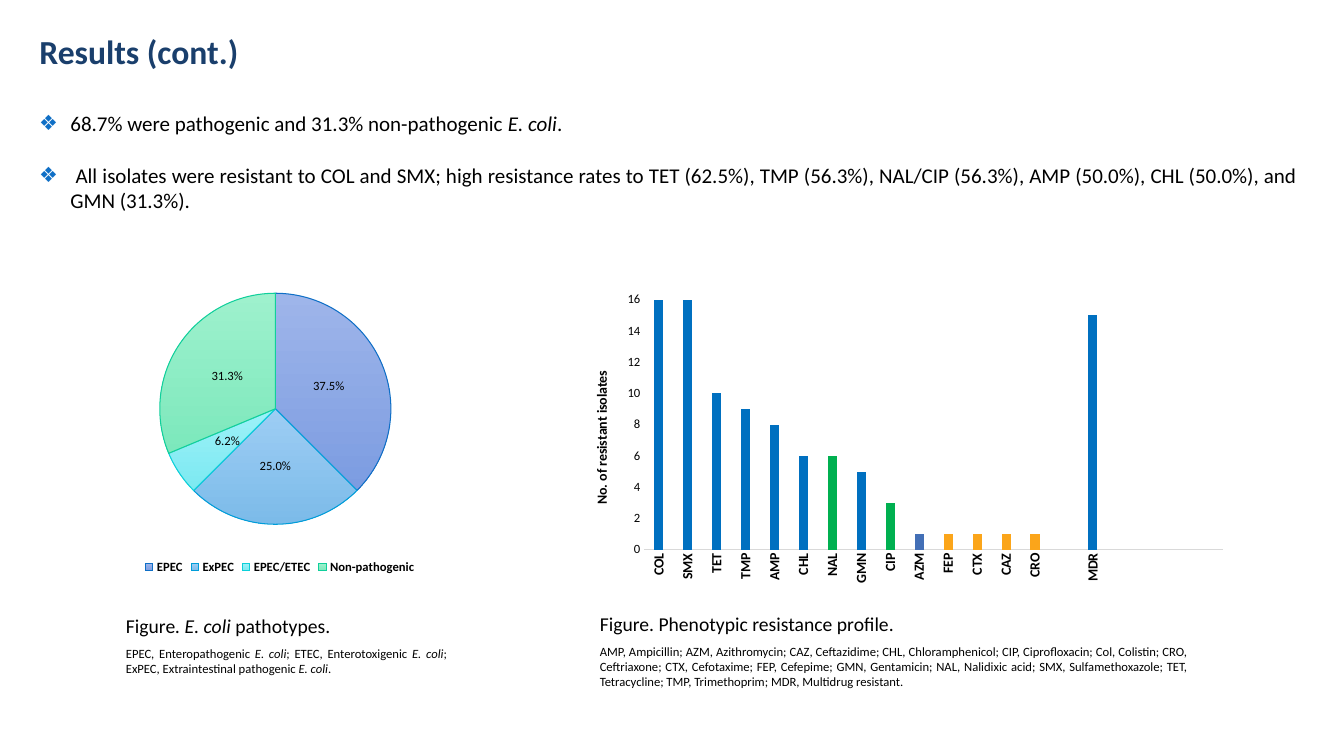
from dataclasses import dataclass
from lxml import etree
from pptx import Presentation
from pptx.chart.data import CategoryChartData
from pptx.dml.color import RGBColor
from pptx.enum.chart import XL_CHART_TYPE, XL_LABEL_POSITION, XL_LEGEND_POSITION, XL_TICK_MARK
from pptx.enum.text import MSO_ANCHOR, PP_ALIGN
from pptx.oxml.ns import qn
from pptx.util import Inches, Pt

PIE, COLUMNS = XL_CHART_TYPE.PIE, XL_CHART_TYPE.COLUMN_CLUSTERED
CENTER, BOTTOM, NO_TICK = XL_LABEL_POSITION.CENTER, XL_LEGEND_POSITION.BOTTOM, XL_TICK_MARK.NONE
JUSTIFY, LEFT, MIDDLE = PP_ALIGN.JUSTIFY, PP_ALIGN.LEFT, MSO_ANCHOR.MIDDLE


@dataclass(frozen=True)
class Theme:
    font: str = "Calibri"
    heading: str = "1A3F6C"
    text: str = "000000"
    bullet: str = "0F6FC6"
    axis: str = "D9D9D9"
    title_size: int = 24
    body_size: int = 15
    caption_size: int = 14
    axis_size: int = 10
    small_size: int = 9


THEME = Theme()
WIDTH, HEIGHT = Inches(13.33), Inches(7.5)
GRID = 100

TITLE = "Results (cont.)"
FINDINGS = [
    [("68.7% were pathogenic and 31.3% non-pathogenic ", False), ("E. coli", True), (".", False)],
    [(" All isolates were resistant to COL and SMX; high resistance rates to TET (62.5%), "
      "TMP (56.3%), NAL/CIP (56.3%), AMP (50.0%), CHL (50.0%), and GMN (31.3%).", False)],
]
PATHOTYPES = [
    ("EPEC", 37.5, "9EB5EA", "7C9CE1", "0F6FC6"),
    ("ExPEC", 25.0, "9DCDF4", "7CBBE9", "009DD9"),
    ("EPEC/ETEC", 6.2, "9DF1F8", "7CE9F1", "0BD0D9"),
    ("Non-pathogenic", 31.3, "9EF1CD", "7CE8BC", "10CF9B"),
]
PATHOTYPE_CAPTION = [("Figure", False), (". E. coli ", True), ("pathotypes.", False)]
PATHOTYPE_KEY = [
    ("EPEC, Enteropathogenic ", False), ("E. coli", True),
    ("; ETEC, Enterotoxigenic ", False), ("E. coli", True),
    ("; ExPEC, Extraintestinal pathogenic ", False), ("E. coli", True), (".", False),
]
BLUE, GREEN, AMBER, STEEL = "0070C0", "00B050", "FBA51A", "436FB6"
RESISTANCE = [
    ("COL", 16, BLUE), ("SMX", 16, BLUE), ("TET", 10, BLUE), ("TMP", 9, BLUE),
    ("AMP", 8, BLUE), ("CHL", 6, BLUE), ("NAL", 6, GREEN), ("GMN", 5, BLUE),
    ("CIP", 3, GREEN), ("AZM", 1, STEEL), ("FEP", 1, AMBER), ("CTX", 1, AMBER),
    ("CAZ", 1, AMBER), ("CRO", 1, AMBER), ("", None, None), ("MDR", 15, BLUE),
] + [("", None, None)] * 4
RESISTANCE_AXIS = "No. of resistant isolates"
RESISTANCE_CAPTION = [("Figure. Phenotypic resistance profile.", False)]
RESISTANCE_KEY = [
    ("AMP, Ampicillin; AZM, Azithromycin; CAZ, Ceftazidime; CHL, Chloramphenicol; "
     "CIP, Ciprofloxacin; Col, Colistin; CRO, Ceftriaxone; CTX, Cefotaxime; FEP, Cefepime; "
     "GMN, Gentamicin; NAL, Nalidixic acid; SMX, Sulfamethoxazole; TET, Tetracycline; "
     "TMP, Trimethoprim; MDR, Multidrug resistant.", False),
]

AREAS = {
    "title": (2.18, 3.47, 16.5, 6.67),
    "findings": (2.18, 14, 95.12, 15.07),
    "pathotypes": (4.28, 36.8, 33.08, 39.73),
    "pathotype_caption": (8.63, 80.53, 25.36, 12.8),
    "resistance": (42.99, 38.67, 49.51, 42),
    "resistance_caption": (43.89, 80.27, 45.16, 11.87),
}


def place(area):
    col, row, cols, rows = AREAS[area]
    return [round(n * side / GRID) for n, side in
            ((col, WIDTH), (row, HEIGHT), (cols, WIDTH), (rows, HEIGHT))]


def style(font, size, color=THEME.text, bold=False, italic=False):
    font.name, font.size, font.bold, font.italic = THEME.font, Pt(size), bold, italic
    font.color.rgb = RGBColor.from_string(color)


def write(paragraph, runs, size):
    paragraph.alignment = JUSTIFY
    for words, italic in runs:
        run = paragraph.add_run()
        run.text = words
        style(run.font, size, italic=italic)


def add_paragraphs(slide, area, entries, gap, bulleted=False):
    frame = slide.shapes.add_textbox(*place(area)).text_frame
    frame.word_wrap = True
    for i, (runs, size) in enumerate(entries):
        paragraph = frame.add_paragraph() if i else frame.paragraphs[0]
        paragraph.space_before = Pt(gap if i else 6)
        write(paragraph, runs, size)
        if bulleted:
            add_bullet(paragraph)


def add_bullet(paragraph):
    props = paragraph._p.get_or_add_pPr()
    indent = Inches(0.31)
    props.set("marL", str(indent))
    props.set("indent", str(-indent))
    color = etree.SubElement(props, qn("a:buClr"))
    etree.SubElement(color, qn("a:srgbClr"), val=THEME.bullet)
    etree.SubElement(props, qn("a:buFont"), typeface="Arial")
    etree.SubElement(props, qn("a:buChar"), char="❖")


def set_plot_area(chart, *box):
    plot_area = chart._chartSpace.chart.plotArea
    for old in plot_area.findall(qn("c:layout")):
        plot_area.remove(old)
    layout = etree.Element(qn("c:layout"))
    plot_area.insert(0, layout)
    manual = etree.SubElement(layout, qn("c:manualLayout"))
    settings = [("layoutTarget", "inner"), ("xMode", "edge"), ("yMode", "edge")]
    for tag, value in settings + list(zip("xywh", box)):
        etree.SubElement(manual, qn(f"c:{tag}"), val=str(value))


def add_chart(slide, area, kind, names, values):
    data = CategoryChartData()
    data.categories = names
    data.add_series("Series 1", values)
    chart = slide.shapes.add_chart(kind, *place(area), data).chart
    chart.has_title = chart.has_legend = False
    style(chart.font, THEME.axis_size)
    return chart


def add_pathotypes(slide):
    names, shares, *_ = zip(*PATHOTYPES)
    chart = add_chart(slide, "pathotypes", PIE, names, shares)
    set_plot_area(chart, 0.23, 0.05, 0.52, 0.77)
    chart.has_legend = True
    chart.legend.position = BOTTOM
    chart.legend.include_in_layout = False
    style(chart.legend.font, THEME.small_size, bold=True)
    plot = chart.plots[0]
    plot.has_data_labels = True
    labels = plot.data_labels
    labels.show_percentage, labels.show_value = True, False
    labels.number_format, labels.number_format_is_linked = "0.0%", False
    labels.position = CENTER
    style(labels.font, THEME.small_size)
    for i, (_, _, top, base, edge) in enumerate(PATHOTYPES):
        wedge = plot.series[0].points[i].format
        wedge.fill.gradient()
        wedge.fill.gradient_angle = 270
        for stop, color in zip(wedge.fill.gradient_stops, (top, base)):
            stop.color.rgb = RGBColor.from_string(color)
        wedge.line.color.rgb = RGBColor.from_string(edge)
        wedge.line.width = Pt(0.75)


def add_resistance(slide):
    names, counts, colors = zip(*RESISTANCE)
    chart = add_chart(slide, "resistance", COLUMNS, names, counts)
    set_plot_area(chart, 0.1, 0.02, 0.87, 0.79)
    plot = chart.plots[0]
    plot.gap_width, plot.overlap, plot.vary_by_categories = 219, -27, False
    bars = plot.series[0]
    bars.invert_if_negative = False
    bars.format.fill.solid()
    bars.format.fill.fore_color.rgb = RGBColor.from_string(STEEL)
    for i, color in enumerate(colors):
        if color not in (None, STEEL):
            fill = bars.points[i].format.fill
            fill.solid()
            fill.fore_color.rgb = RGBColor.from_string(color)
    drugs, isolates = chart.category_axis, chart.value_axis
    for axis in (drugs, isolates):
        axis.major_tick_mark = axis.minor_tick_mark = NO_TICK
        axis.has_major_gridlines = False
    style(drugs.tick_labels.font, THEME.axis_size, bold=True)
    drugs._element.txPr.bodyPr.set("rot", "-5400000")
    drugs.format.line.color.rgb = RGBColor.from_string(THEME.axis)
    drugs.format.line.width = Pt(0.75)
    style(isolates.tick_labels.font, THEME.small_size)
    isolates.format.line.fill.background()
    isolates.minimum_scale, isolates.maximum_scale, isolates.major_unit = 0, 16, 2
    run = isolates.axis_title.text_frame.paragraphs[0].add_run()
    run.text = RESISTANCE_AXIS
    style(run.font, THEME.axis_size, bold=True)


def main():
    deck = Presentation()
    deck.slide_width, deck.slide_height = WIDTH, HEIGHT
    slide = deck.slides.add_slide(deck.slide_layouts[5])
    title = slide.shapes.title
    title.left, title.top, title.width, title.height = place("title")
    frame = title.text_frame
    frame.word_wrap, frame.vertical_anchor = False, MIDDLE
    frame.paragraphs[0].alignment = LEFT
    run = frame.paragraphs[0].add_run()
    run.text = TITLE
    style(run.font, THEME.title_size, THEME.heading, bold=True)
    add_paragraphs(slide, "findings", [(runs, THEME.body_size) for runs in FINDINGS], 19, True)
    add_pathotypes(slide)
    add_resistance(slide)
    for area, caption, key in (("pathotype_caption", PATHOTYPE_CAPTION, PATHOTYPE_KEY),
                               ("resistance_caption", RESISTANCE_CAPTION, RESISTANCE_KEY)):
        add_paragraphs(slide, area, [(caption, THEME.caption_size), (key, THEME.small_size)], 6)
    deck.save("out.pptx")


if __name__ == "__main__":
    main()
